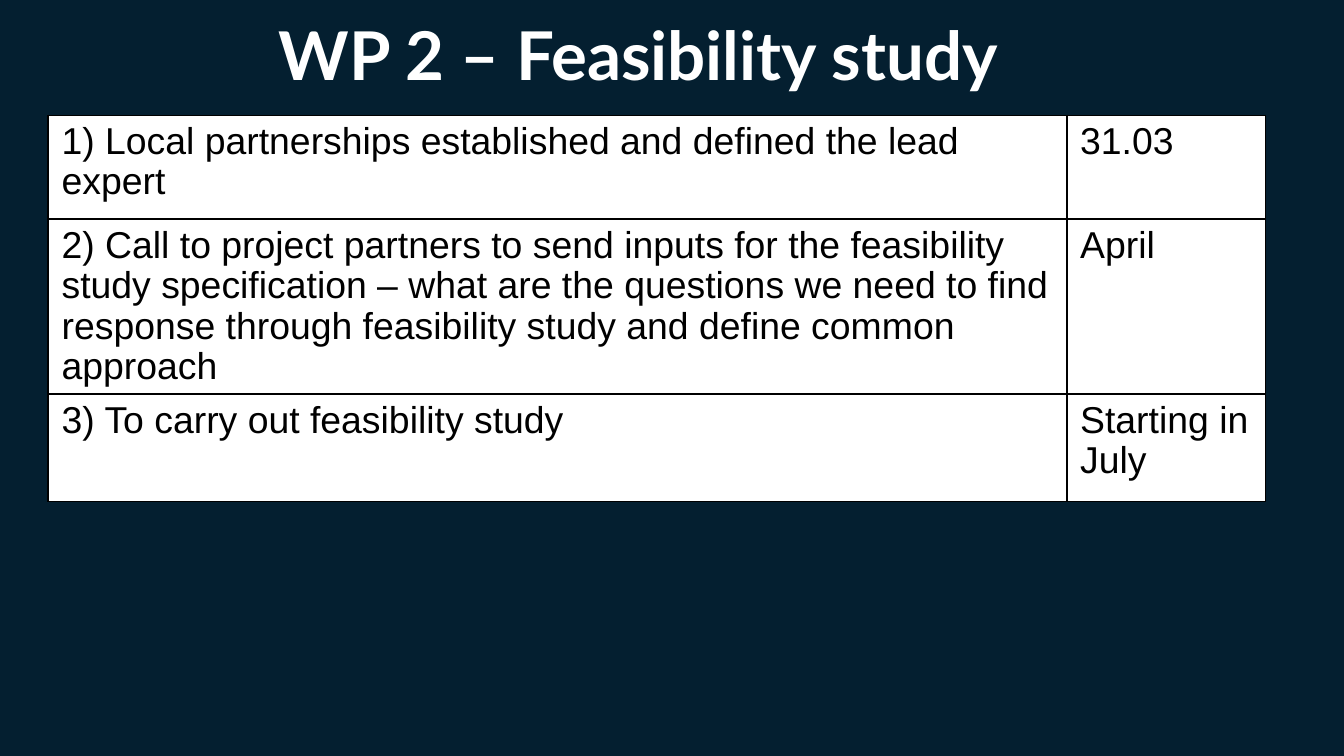
"""Build the feasibility study slide with its table of tasks and dates."""
import lxml.etree
import pptx
import pptx.dml.color
import pptx.enum.text
import pptx.oxml.ns
import pptx.util
from pptx.util import Cm


def colour(code):
    return pptx.dml.color.RGBColor.from_string(code)


class SlideBuilder:
    navy = "041F30"
    white = "FFFFFF"
    black = "000000"
    title_font = "Lato"
    body_font = "Arial"

    def __init__(self, deck):
        self.page = deck.slides.add_slide(deck.slide_layouts[0])
        fill = self.page.background.fill
        fill.solid()
        fill.fore_color.rgb = colour(self.navy)
        subtitle = self.page.placeholders[1].element
        subtitle.getparent().remove(subtitle)

    def add_span(self, para, text, font, size, code, bold=False):
        span = para.add_run()
        span.text = text
        span.font.name = font
        span.font.size = pptx.util.Pt(size)
        span.font.bold = bold
        span.font.color.rgb = colour(code)

    def title(self, text, left, top, width, height):
        box = self.page.shapes.title
        box.left, box.top, box.width, box.height = left, top, width, height
        frame = box.text_frame
        frame.margin_left = frame.margin_right = Cm(0.25)
        frame.margin_top = frame.margin_bottom = Cm(0.25)
        frame.vertical_anchor = pptx.enum.text.MSO_ANCHOR.BOTTOM
        frame.auto_size = pptx.enum.text.MSO_AUTO_SIZE.NONE
        para = frame.paragraphs[0]
        para.alignment = pptx.enum.text.PP_ALIGN.CENTER
        para.line_spacing = 1.0
        self.add_span(para, text, self.title_font, 36, self.white, bold=True)

    def borders(self, cell):
        properties = cell._tc.get_or_add_tcPr()
        qn = pptx.oxml.ns.qn
        for side in ("lnL", "lnR", "lnT", "lnB"):
            line = lxml.etree.SubElement(properties, qn(f"a:{side}"), w=str(pptx.util.Pt(1)))
            fill = lxml.etree.SubElement(line, qn("a:solidFill"))
            lxml.etree.SubElement(fill, qn("a:srgbClr"), val=self.black)

    def table(self, rows, left, top, widths, heights):
        frame = self.page.shapes.add_table(
            len(rows), len(widths), left, top, sum(widths), sum(heights))
        table = frame.table
        table.first_row = table.horz_banding = False
        for column, width in zip(table.columns, widths):
            column.width = width
        for row, height, texts in zip(table.rows, heights, rows):
            row.height = height
            for cell, text in zip(row.cells, texts):
                self.borders(cell)
                cell.fill.solid()
                cell.fill.fore_color.rgb = colour(self.white)
                para = cell.text_frame.paragraphs[0]
                para.line_spacing = 0.97
                self.add_span(para, text, self.body_font, 20, self.black)


def main():
    deck = pptx.Presentation()
    deck.slide_width, deck.slide_height = Cm(25.4), Cm(14.28)
    slide = SlideBuilder(deck)
    slide.title("WP 2 – Feasibility study", Cm(1.27), Cm(0), Cm(21.59), Cm(2.03))
    tasks = [
        ("1) Local partnerships established and defined the lead expert", "31.03"),
        ("2) Call to project partners to send inputs for the feasibility study "
         "specification – what are the questions we need to find response through "
         "feasibility study and define common approach", "April"),
        ("3) To carry out feasibility study", "Starting in July"),
    ]
    slide.table(tasks, Cm(0.91), Cm(2.18), [Cm(19.25), Cm(3.76)],
                [Cm(1.96), Cm(1.93), Cm(2.03)])
    deck.save("out.pptx")


if __name__ == "__main__":
    main()
